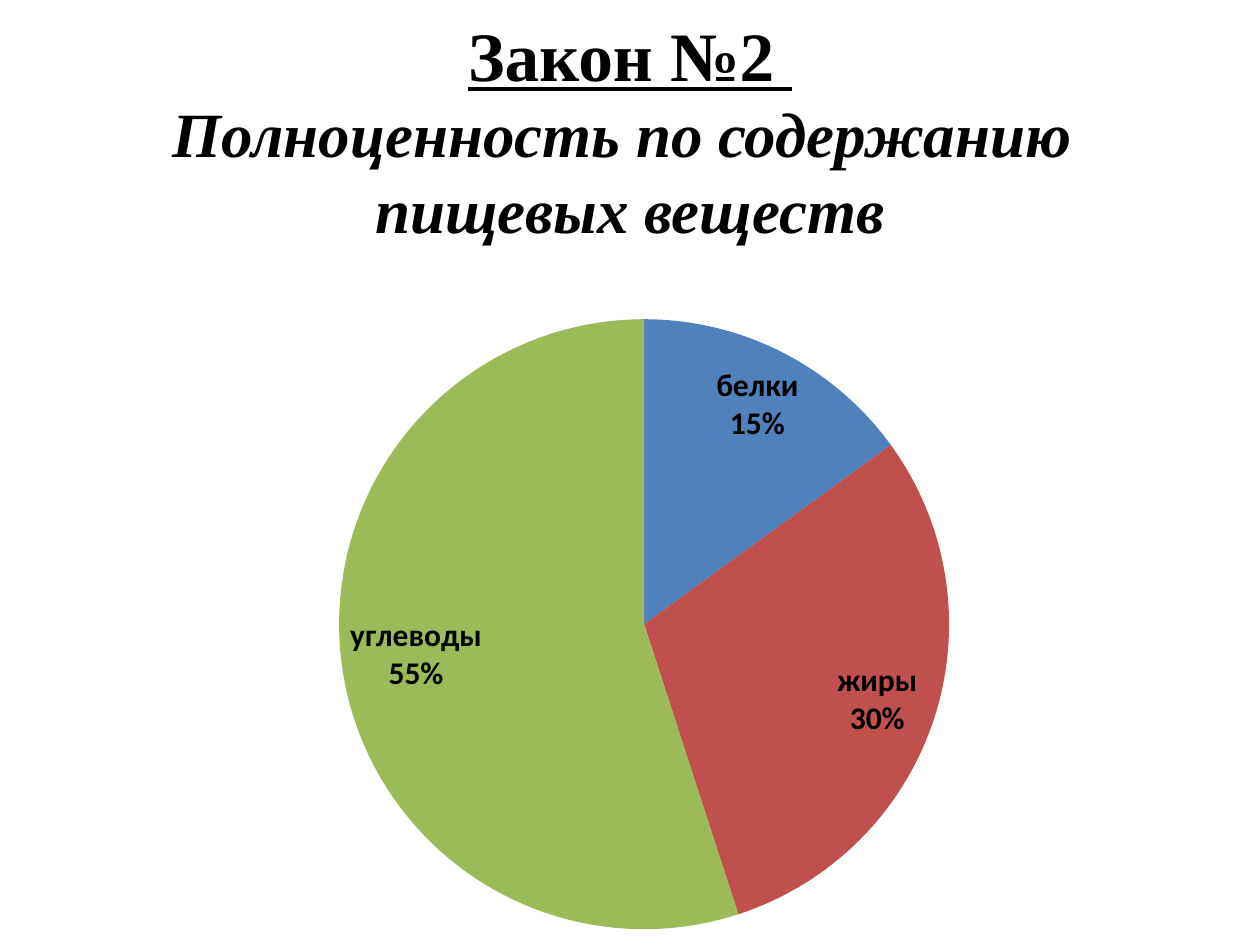
from pptx import Presentation
from pptx import util as u
from pptx.chart.data import CategoryChartData
from pptx.dml.color import RGBColor
from pptx.enum import chart as ch, text as tx
from pptx.oxml import parse_xml

hues = {"ink": "000000", "белки": "4F81BD", "жиры": "C0504D", "углеводы": "9BBB59"}
parts = {"белки": 15, "жиры": 30, "углеводы": 55}
shifts = [(0.02, 0.01), (-0.01, 0.03), (0, 0.03)]
space = 'xmlns:c="http://schemas.openxmlformats.org/drawingml/2006/chart"'


def write(para, words, size=36, bold=True, italic=False, line=False):
    for i, row in enumerate(words.split("\n")):
        if i:
            para.add_line_break()
        if not row:
            continue
        run = para.add_run()
        run.text = row
        font = run.font
        font.name, font.size = "Times New Roman", u.Pt(size)
        font.bold, font.italic, font.underline = bold, italic, line
        font.color.rgb = RGBColor.from_string(hues["ink"])


deck = Presentation()
deck.slide_width, deck.slide_height = u.Cm(25.4), u.Cm(19.05)
slide = deck.slides.add_slide(deck.slide_layouts[6])

title = slide.shapes.add_textbox(u.Cm(0), u.Cm(0.43), u.Cm(25.4), u.Cm(4.34))
frame = title.text_frame
frame.word_wrap = True
frame.vertical_anchor = tx.MSO_ANCHOR.MIDDLE
head = frame.paragraphs[0]
head.alignment = tx.PP_ALIGN.CENTER
write(head, "Закон №2 \n", size=39.6, line=True)
write(head, "Полноценность по содержанию \nпищевых веществ", italic=True)

data = CategoryChartData(number_format="0")
data.categories = list(parts)
data.add_series("Series 1", list(parts.values()))
pie = slide.shapes.add_chart(
    ch.XL_CHART_TYPE.PIE, u.Cm(3.17), u.Cm(4.72), u.Cm(19.63), u.Cm(14.3), data
).chart
pie.has_title = False
pie.has_legend = False
pie.font.name, pie.font.size = "Calibri", u.Pt(18)
pie.font.color.rgb = RGBColor.from_string(hues["ink"])

plot = pie.plots[0]
plot.vary_by_categories = True
row = plot.series[0]
for i, name in enumerate(parts):
    fill = row.points[i].format.fill
    fill.solid()
    fill.fore_color.rgb = RGBColor.from_string(hues[name])

tags = row.data_labels
tags.show_value = False
tags.show_category_name = True
tags.show_percentage = True
tags.number_format, tags.number_format_is_linked = "0%", False
tags.position = ch.XL_LABEL_POSITION.INSIDE_END
tags.font.bold = True
tags.font.size = u.Pt(18)
tags.font.name = "Calibri"
tags.font.color.rgb = RGBColor.from_string(hues["ink"])

node = tags._element
last = node.xpath("c:showBubbleSize | c:showPercent")[-1]
last.addnext(parse_xml(f"<c:separator {space}>\n</c:separator>"))
for i, (x, y) in enumerate(shifts):
    node.insert(i, parse_xml(
        f'<c:dLbl {space}><c:idx val="{i}"/><c:layout><c:manualLayout>'
        f'<c:x val="{x}"/><c:y val="{y}"/></c:manualLayout></c:layout>'
        '<c:dLblPos val="inEnd"/><c:showLegendKey val="0"/><c:showVal val="0"/>'
        '<c:showCatName val="1"/><c:showSerName val="0"/><c:showPercent val="1"/>'
        '<c:showBubbleSize val="0"/><c:separator>\n</c:separator></c:dLbl>'
    ))
    font = row.points[i].data_label.font
    font.bold, font.size, font.name = True, u.Pt(18), "Calibri"
    font.color.rgb = RGBColor.from_string(hues["ink"])

area = pie._chartSpace.chart.plotArea
for old in area.xpath("c:layout"):
    area.remove(old)
area.insert(0, parse_xml(
    f'<c:layout {space}><c:manualLayout><c:layoutTarget val="inner"/>'
    '<c:xMode val="edge"/><c:yMode val="edge"/>'
    '<c:x val="0.18"/><c:y val="0.12"/><c:w val="0.64"/><c:h val="0.86"/>'
    "</c:manualLayout></c:layout>"
))

deck.save("out.pptx")
